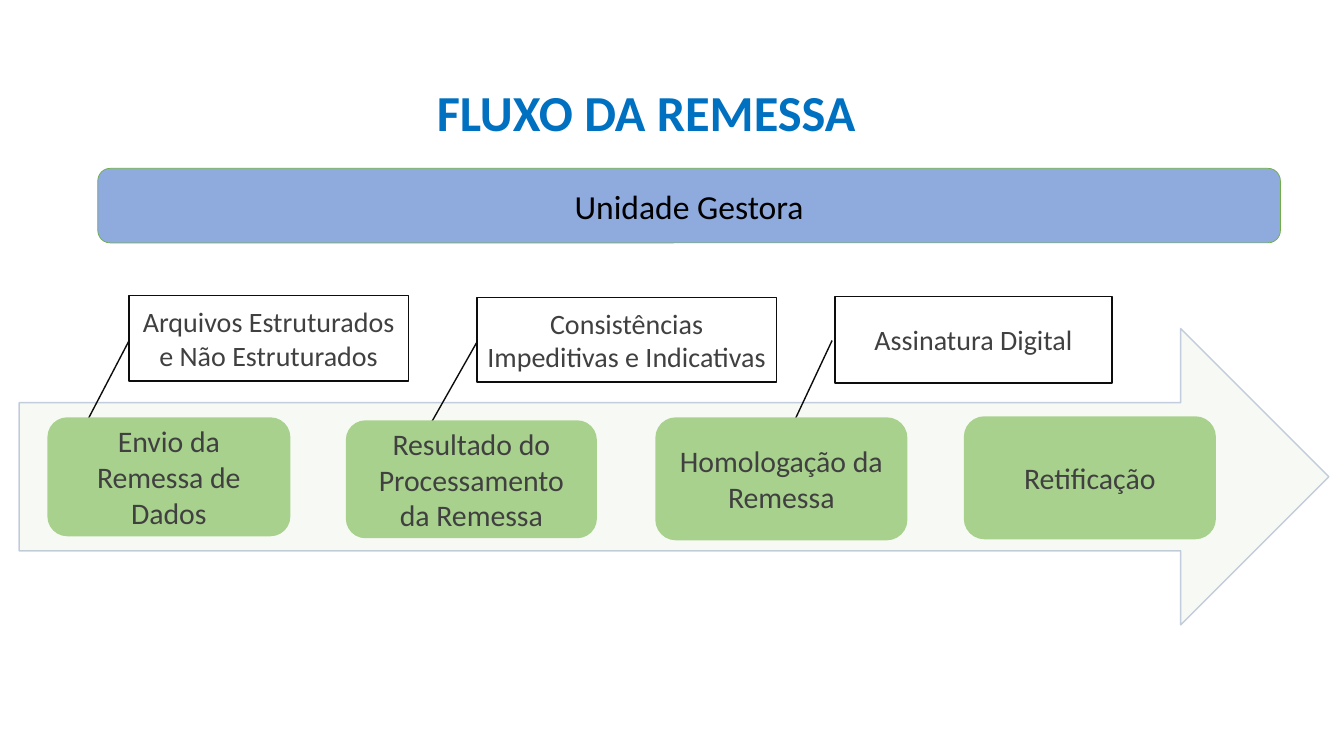
from lxml import etree
from pptx import Presentation
from pptx.dml.color import RGBColor
from pptx.enum import shapes, text
from pptx.oxml import ns
from pptx.util import Inches, Pt

WHITE = RGBColor(0xFF, 0xFF, 0xFF)
BLACK = RGBColor(0x00, 0x00, 0x00)
INK = RGBColor(0x0D, 0x0D, 0x0D)
GREY = RGBColor(0x40, 0x40, 0x40)
TITLE_BLUE = RGBColor(0x00, 0x70, 0xC0)
BAR_BLUE = RGBColor(0x8F, 0xAA, 0xDC)
ARROW_BLUE = RGBColor(0x32, 0x54, 0x91)
PALE_GREEN = RGBColor(0xE2, 0xF0, 0xD9)
STEP_GREEN = RGBColor(0xA9, 0xD1, 0x8E)
EDGE_GREEN = RGBColor(0x70, 0xAD, 0x47)


def add_box(kind, place, fill, line=None, width=1):
    box = page.shapes.add_shape(kind, *[Inches(value) for value in place])
    box.shadow.inherit = False
    box.fill.solid()
    box.fill.fore_color.rgb = fill
    if line is None:
        box.line.fill.background()
    else:
        box.line.color.rgb = line
        box.line.width = Pt(width)
    return box


def write(box, words, size, color, bold=False):
    frame = box.text_frame
    frame.word_wrap = True
    frame.vertical_anchor = text.MSO_ANCHOR.MIDDLE
    para = frame.paragraphs[0]
    para.alignment = text.PP_ALIGN.CENTER
    span = para.add_run()
    span.text = words
    style = {"name": "Calibri", "size": Pt(size), "bold": bold}
    for name, value in style.items():
        setattr(span.font, name, value)
    span.font.color.rgb = color


deck = Presentation()
deck.slide_width = Inches(13.33)
deck.slide_height = Inches(7.5)
page = deck.slides.add_slide(deck.slide_layouts[5])

title = page.shapes.title
place = {"left": 0.23, "top": 0.15, "width": 12.36, "height": 1.14}
for name, value in place.items():
    setattr(title, name, Inches(value))
write(title, "FLUXO DA REMESSA", 36, TITLE_BLUE, bold=True)
title.text_frame.vertical_anchor = text.MSO_ANCHOR.TOP
title.text_frame.auto_size = text.MSO_AUTO_SIZE.NONE
title.text_frame.paragraphs[0].line_spacing = 2.0

arrow = add_box(shapes.MSO_SHAPE.RIGHT_ARROW, (0.19, 3.26, 12.99, 2.94), PALE_GREEN, ARROW_BLUE)
for color in arrow.element.spPr.iter(ns.qn("a:srgbClr")):
    etree.SubElement(color, ns.qn("a:alpha"), val="27000")

unit = add_box(shapes.MSO_SHAPE.ROUNDED_RECTANGLE, (0.97, 1.67, 11.73, 0.74), BAR_BLUE, EDGE_GREEN, 0.5)
write(unit, "Unidade Gestora", 24, BLACK)

callouts = [
    ("Arquivos Estruturados e Não Estruturados", (1.28, 2.93, 2.77, 0.85), (0.53, 0)),
    ("Consistências Impeditivas e Indicativas", (4.73, 2.95, 2.97, 0.84), (0.53, 0)),
    ("Assinatura Digital", (8.28, 2.94, 2.75, 0.86), (0.51, -0.01)),
]
for words, place, start in callouts:
    callout = add_box(shapes.MSO_SHAPE.LINE_CALLOUT_1, place, WHITE, INK)
    for index, value in enumerate((*start, 1.485, -0.153)):
        callout.adjustments[index] = value
    write(callout, words, 20, GREY)
    callout.text_frame.margin_left = callout.text_frame.margin_right = Inches(0.08)

steps = [
    ("Envio da Remessa de Dados", (0.47, 4.14, 2.41, 1.18)),
    ("Resultado do Processamento da Remessa", (3.43, 4.17, 2.49, 1.17)),
    ("Homologação da Remessa", (6.5, 4.14, 2.5, 1.22)),
    ("Retificação", (9.56, 4.13, 2.5, 1.22)),
]
for words, place in steps:
    step = add_box(shapes.MSO_SHAPE.ROUNDED_RECTANGLE, place, STEP_GREEN)
    write(step, words, 21.3, GREY)

deck.save("out.pptx")
